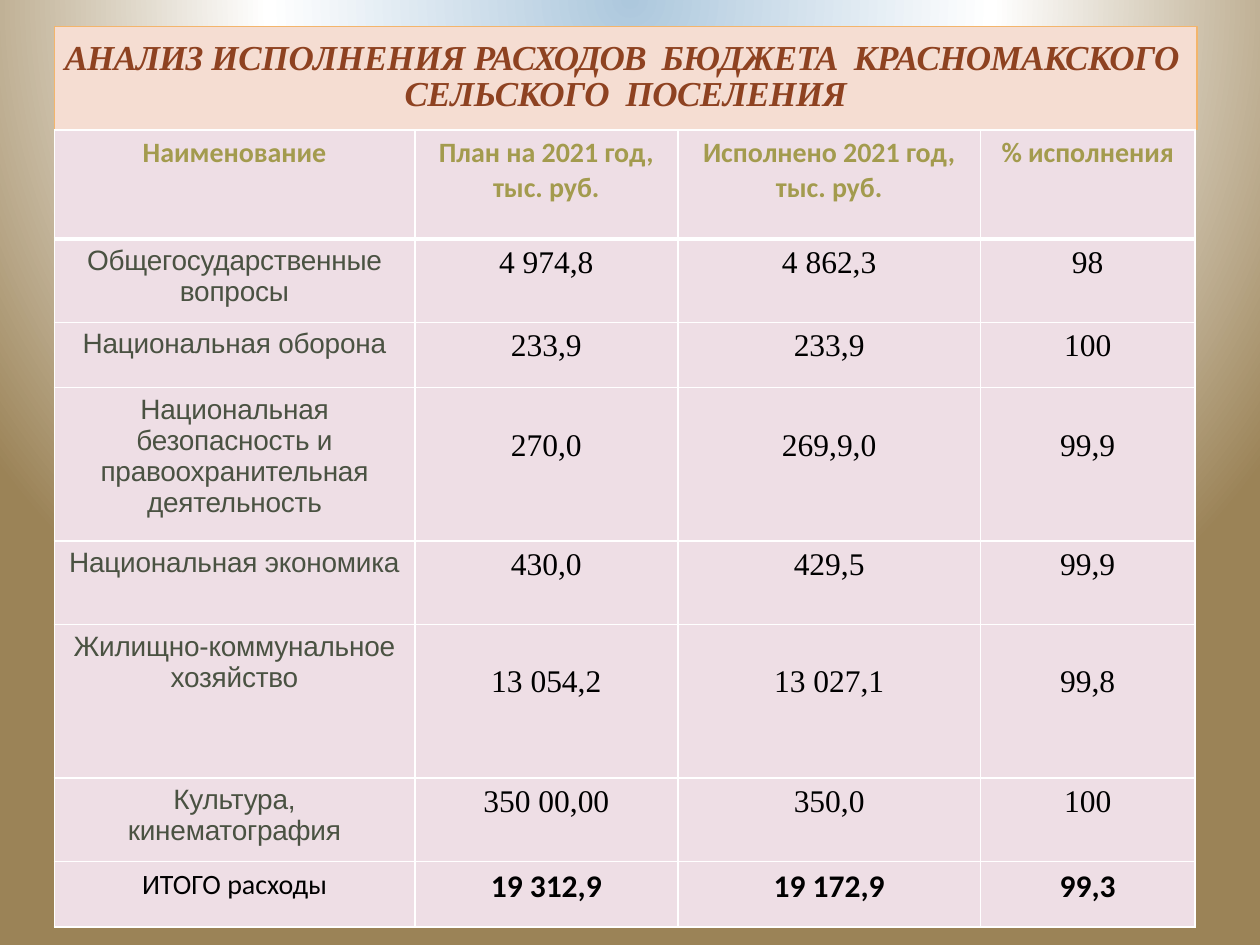
"""Build a slide with a table of budget spending by section."""
from lxml import etree
from pptx import Presentation
from pptx import oxml
from pptx import util as u
from pptx.dml.color import RGBColor
from pptx.enum import shapes, text
from pptx.oxml import ns

SKY = RGBColor(0xAD, 0xC8, 0xDD)
WHITE = RGBColor(0xFF, 0xFF, 0xFF)
SAND = RGBColor(0x9B, 0x83, 0x57)
PEACH = RGBColor(0xF5, 0xDD, 0xD2)
ORANGE = RGBColor(0xF3, 0xB5, 0x6C)
BROWN = RGBColor(0x8E, 0x42, 0x21)
PINK = RGBColor(0xEE, 0xDE, 0xE5)
OLIVE = RGBColor(0xA3, 0x9B, 0x4E)
GREEN = RGBColor(0x4A, 0x52, 0x42)
BLACK = RGBColor(0, 0, 0)

LEFT = 31
COLUMN_WIDTHS = [206, 150.4, 172.9, 122.6]
ROW_HEIGHTS = [62.3, 47.7, 37.4, 87.7, 47.7, 87.7, 47.7, 37.4]
TALL_ROW = 80
LOWERED_MARGIN = 23

TITLE = [
    ("АНАЛИЗ ", -0.5),
    ("ИСПОЛНЕНИЯ ", -0.1),
    ("РАСХОДОВ  ", -0.8),
    ("БЮДЖЕТА  КРАСНОМАКСКОГО  ", -0.4),
    ("СЕЛЬСКОГО  ПОСЕЛЕНИЯ", -0.3),
]
ROWS = [
    ["Наименование", "План на 2021 год, тыс. руб.",
     "Исполнено 2021 год, тыс. руб.", "% исполнения"],
    ["Общегосударственные вопросы", "4 974,8", "4 862,3", "98"],
    ["Национальная оборона", "233,9", "233,9", "100"],
    ["Национальная безопасность и правоохранительная деятельность",
     "270,0", "269,9,0", "99,9"],
    ["Национальная экономика", "430,0", "429,5", "99,9"],
    ["Жилищно-коммунальное хозяйство", "13 054,2", "13 027,1", "99,8"],
    ["Культура, кинематография", "350 00,00", "350,0", "100"],
    ["ИТОГО расходы", "19 312,9", "19 172,9", "99,3"],
]

HEADER_STYLE = dict(size=16, font="Calibri", color=OLIVE, bold=True)
NAME_STYLE = dict(size=16, font="Arial", color=GREEN, spacing=-0.1)
VALUE_STYLE = dict(size=18, font="Times New Roman", color=BLACK)
TOTAL_NAME_STYLE = dict(size=16, font="Calibri", color=BLACK)
TOTAL_VALUE_STYLE = dict(size=18, font="Calibri", color=BLACK, bold=True)


def add_text(paragraph, content, *, size, font, color, bold=False,
             italic=False, spacing=0):
    """Add a formatted run to a centred paragraph."""
    paragraph.alignment = text.PP_ALIGN.CENTER
    run = paragraph.add_run()
    run.text = content
    run.font.size = u.Pt(size)
    run.font.name = font
    run.font.color.rgb = color
    run.font.bold = bold
    run.font.italic = italic
    if spacing:
        run.font._element.set("spc", str(round(spacing * 100)))


def set_background(slide):
    """Fill the slide with a circular gradient centred above its top edge."""
    stops = "".join(
        f'<a:gs pos="{position * 1000}"><a:srgbClr val="{color}"/></a:gs>'
        for position, color in [(0, SKY), (46, WHITE), (100, SAND)])
    background = oxml.parse_xml(
        f'<p:bg {ns.nsdecls("p", "a")}><p:bgPr><a:gradFill rotWithShape="1">'
        f'<a:gsLst>{stops}</a:gsLst><a:path path="circle">'
        '<a:fillToRect l="50000" t="-80000" r="50000" b="180000"/></a:path>'
        '</a:gradFill><a:effectLst/></p:bgPr></p:bg>')
    slide.element.cSld.insert(0, background)


def add_title(slide):
    """Add the framed heading."""
    shape = slide.shapes.add_shape(
        shapes.MSO_SHAPE.RECTANGLE, u.Pt(LEFT), u.Pt(15), u.Pt(653), u.Pt(59))
    shape.shadow.inherit = False
    shape.fill.solid()
    shape.fill.fore_color.rgb = PEACH
    shape.line.color.rgb = ORANGE
    shape.line.width = u.Pt(0.75)
    frame = shape.text_frame
    frame.word_wrap = True
    frame.vertical_anchor = text.MSO_ANCHOR.MIDDLE
    frame.margin_left = frame.margin_right = u.Pt(0)
    frame.margin_top = frame.margin_bottom = u.Pt(0)
    paragraph = frame.paragraphs[0]
    paragraph.line_spacing = 0.85
    for content, spacing in TITLE:
        add_text(paragraph, content, size=20, font="Times New Roman",
                 color=BROWN, bold=True, italic=True, spacing=spacing)


def set_borders(cell, top, bottom):
    """Draw white cell borders with the given top and bottom widths."""
    properties = cell._tc.get_or_add_tcPr()
    for side, width in [("L", 1), ("R", 1), ("T", top), ("B", bottom)]:
        line = etree.SubElement(properties, ns.qn(f"a:ln{side}"), w=str(u.Pt(width)))
        fill = etree.SubElement(line, ns.qn("a:solidFill"))
        etree.SubElement(fill, ns.qn("a:srgbClr"), val=str(WHITE))


def cell_style(row, column):
    """Return the text format for a table position."""
    if row == 0:
        return HEADER_STYLE
    if row == len(ROWS) - 1:
        return TOTAL_VALUE_STYLE if column else TOTAL_NAME_STYLE
    return VALUE_STYLE if column else NAME_STYLE


def add_budget_table(slide):
    """Add the table of planned and actual spending."""
    table = slide.shapes.add_table(
        len(ROWS), len(COLUMN_WIDTHS), u.Pt(LEFT), u.Pt(74.2),
        u.Pt(sum(COLUMN_WIDTHS)), u.Pt(sum(ROW_HEIGHTS))).table
    table.horz_banding = False
    for column, width in zip(table.columns, COLUMN_WIDTHS):
        column.width = u.Pt(width)
    for row, height in enumerate(ROW_HEIGHTS):
        table.rows[row].height = u.Pt(height)
        for column, content in enumerate(ROWS[row]):
            cell = table.cell(row, column)
            set_borders(cell, top=3 if row == 1 else 1, bottom=3 if row == 0 else 1)
            cell.fill.solid()
            cell.fill.fore_color.rgb = PINK
            if column and height > TALL_ROW:
                cell.margin_top = u.Pt(LOWERED_MARGIN)
            add_text(cell.text_frame.paragraphs[0], content, **cell_style(row, column))


def main():
    """Build and save the presentation."""
    presentation = Presentation()
    presentation.slide_width = u.Pt(720)
    presentation.slide_height = u.Pt(540)
    slide = presentation.slides.add_slide(presentation.slide_layouts[6])
    set_background(slide)
    add_title(slide)
    add_budget_table(slide)
    presentation.save("out.pptx")


if __name__ == "__main__":
    main()
